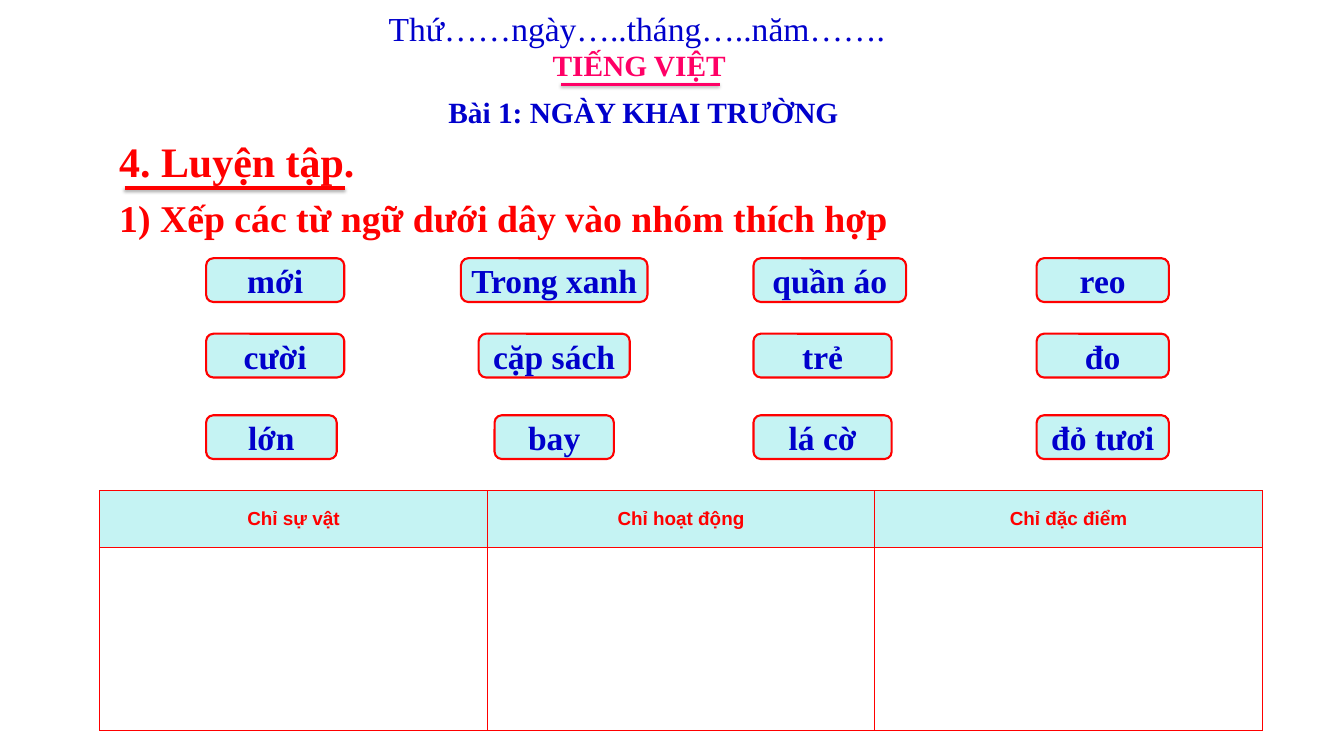
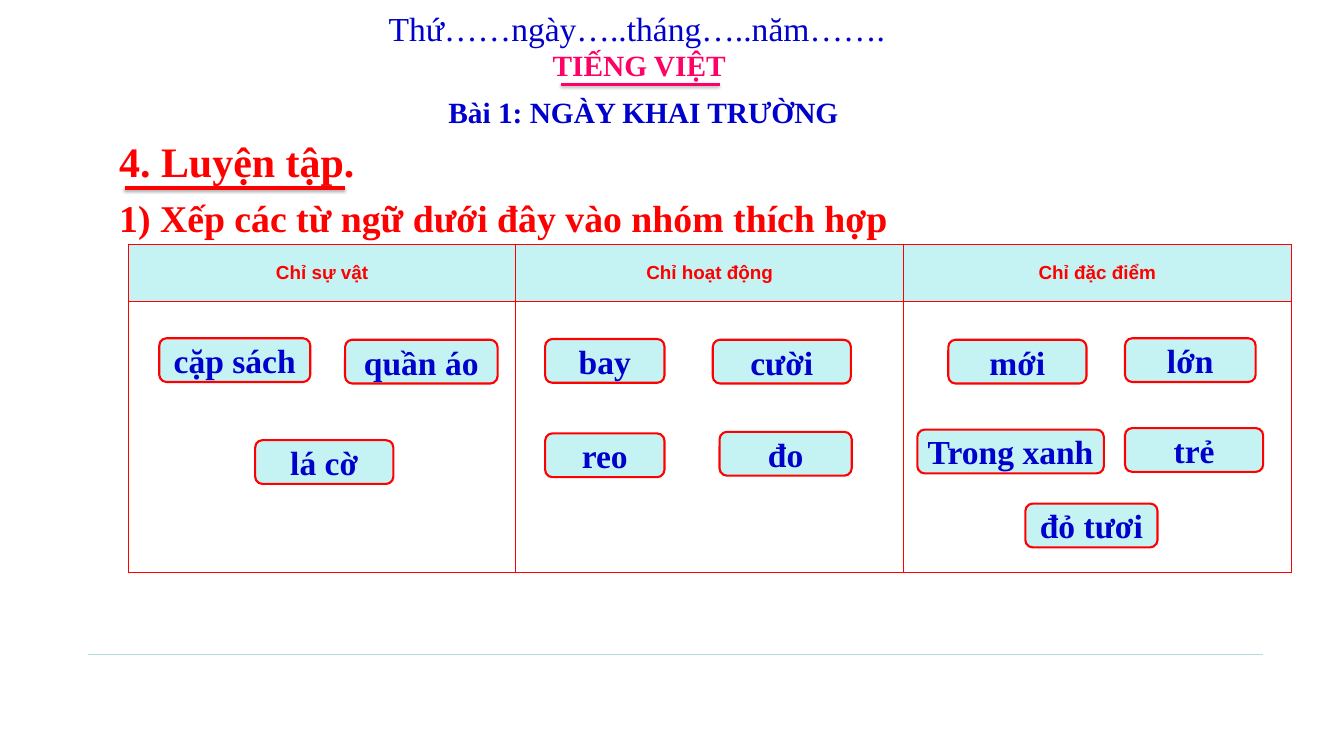
from lxml import etree
from pptx import Presentation
from pptx.dml.color import RGBColor
from pptx.enum.shapes import MSO_CONNECTOR, MSO_SHAPE
from pptx.enum.text import MSO_ANCHOR, MSO_AUTO_SIZE, PP_ALIGN
from pptx.oxml.ns import qn
from pptx.util import Inches, Pt

STRAIGHT = MSO_CONNECTOR.STRAIGHT
ROUND = MSO_SHAPE.ROUNDED_RECTANGLE
MIDDLE = MSO_ANCHOR.MIDDLE
GROW = MSO_AUTO_SIZE.SHAPE_TO_FIT_TEXT
CENTER = PP_ALIGN.CENTER

# Shared look
BLUE, RED, PINK = "0000CC", "FF0000", "FF0066"
AQUA, PALE = "C5F3F3", "B6DCDF"
SERIF, SANS = "Times New Roman", "Arial"
CARD_H = 0.58
WIDTHS = {"mới": 1.83, "cười": 1.83, "lớn": 1.73, "Trong xanh": 2.47,
          "cặp sách": 2, "bay": 1.58, "quần áo": 2.02, "trẻ": 1.83,
          "lá cờ": 1.83, "reo": 1.75, "đo": 1.75, "đỏ tươi": 1.75}
HEADS = ["Chỉ sự vật", "Chỉ hoạt động", "Chỉ đặc điểm"]

# Word cards before sorting: columns by left edge, the second one centred
ROWS = [(3.42, ["mới", "Trong xanh", "quần áo", "reo"]),
        (4.42, ["cười", "cặp sách", "trẻ", "đo"]),
        (5.5, ["lớn", "bay", "lá cờ", "đỏ tươi"])]
LEFTS = [2.73, None, 9.98, 13.73]
MID_X = 7.34

# Word cards after sorting
SORTED = [("cặp sách", 2.11, 4.48), ("quần áo", 4.57, 4.5),
          ("lá cờ", 3.38, 5.83),
          ("bay", 7.22, 4.49), ("cười", 9.44, 4.5),
          ("reo", 7.22, 5.74, 1.58), ("đo", 9.53, 5.72),
          ("mới", 12.56, 4.5), ("lớn", 14.9, 4.48),
          ("Trong xanh", 12.15, 5.69), ("trẻ", 14.9, 5.67),
          ("đỏ tươi", 13.58, 6.67)]


def color(code):
    return RGBColor.from_string(code)


def write(frame, text, size, tint, bold=True, face=SERIF, align=None):
    frame.text = text
    para = frame.paragraphs[0]
    para.alignment = align
    font = para.runs[0].font
    font.size, font.bold, font.name = Pt(size), bold, face
    font.color.rgb = color(tint)


def label(slide, box, text, size, tint, bold=True, wrap=False, align=None):
    frame = slide.shapes.add_textbox(*map(Inches, box)).text_frame
    frame.word_wrap = wrap
    frame.auto_size = GROW
    write(frame, text, size, tint, bold, align=align)
    return frame


def rule(slide, left, right, y, tint, width, shade=None):
    """Level line; shade is (opacity in percent, distance in points)."""
    line = slide.shapes.add_connector(
        STRAIGHT, Inches(left), Inches(y), Inches(right), Inches(y))
    line.line.color.rgb = color(tint)
    line.line.width = Pt(width)
    effect = etree.SubElement(line._element.spPr, qn("a:effectLst"))
    if shade:
        alpha, gap = shade
        cast = etree.SubElement(
            effect, qn("a:outerShdw"), blurRad=str(Pt(3.1)),
            dist=str(Pt(gap)), dir="5400000", rotWithShape="0")
        black = etree.SubElement(cast, qn("a:srgbClr"), val="000000")
        etree.SubElement(black, qn("a:alpha"), val=str(alpha * 1000))


def card(slide, word, left, top, width=None):
    width = width or WIDTHS[word]
    shape = slide.shapes.add_shape(
        ROUND, *map(Inches, (left, top, width, CARD_H)))
    shape.shadow.inherit = False
    shape.fill.solid()
    shape.fill.fore_color.rgb = color(AQUA)
    shape.line.color.rgb = color(RED)
    shape.line.width = Pt(2)
    shape.text_frame.vertical_anchor = MIDDLE
    write(shape.text_frame, word, 32, BLUE, align=CENTER)


def border(cell):
    props = cell._tc.get_or_add_tcPr()
    for side in ("lnL", "lnR", "lnT", "lnB"):
        edge = etree.SubElement(props, qn("a:" + side), w=str(Pt(1)))
        fill = etree.SubElement(edge, qn("a:solidFill"))
        etree.SubElement(fill, qn("a:srgbClr"), val=RED)


def groups(slide, left, top, body):
    """Three-column table with a heading row and an empty body row."""
    head = 0.75
    table = slide.shapes.add_table(
        2, len(HEADS), *map(Inches, (left, top, 15.4, head + body))).table
    table.first_row = table.horz_banding = False
    for row, high in zip(table.rows, (head, body)):
        row.height = Inches(high)
    for cell in table.iter_cells():
        border(cell)
        cell.fill.background()
    for cell, text in zip(table.rows[0].cells, HEADS):
        cell.fill.solid()
        cell.fill.fore_color.rgb = color(AQUA)
        cell.vertical_anchor = MIDDLE
        write(cell.text_frame, text, 18, RED, face=SANS, align=CENTER)


def header(slide, task):
    # Date, subject and lesson
    label(slide, (5.05, 0.05, 6.84, 0.64), "Thứ……ngày…..tháng…..năm…….",
          32, BLUE, bold=False)
    label(slide, (7.22, 0.58, 2.52, 0.57), "TIẾNG VIỆT", 28, PINK)
    rule(slide, 7.43, 9.53, 1.12, PINK, 2, (38, 1.6))
    frame = label(slide, (5.23, 1.17, 6.58, 0.63), "Bài 1: NGÀY KHAI TRƯỜNG",
                  28, BLUE, wrap=True, align=CENTER)
    frame.margin_left = frame.margin_right = Inches(0.16)
    frame.margin_top = frame.margin_bottom = Inches(0.08)
    # Section and task
    label(slide, (1.48, 1.75, 3.75, 0.77), "4. Luyện tập.", 40, RED, wrap=True)
    rule(slide, 1.65, 4.57, 2.49, RED, 3, (35, 1.8))
    label(slide, (1.48, 2.53, 10.48, 0.71), task, 36, RED)


def main():
    deck = Presentation()
    deck.slide_width, deck.slide_height = Inches(17.8), Inches(10)
    blank = deck.slide_layouts[6]

    # Slide 1: words to sort
    slide = deck.slides.add_slide(blank)
    header(slide, "1) Xếp các từ ngữ dưới dây vào nhóm thích hợp")
    for top, words in ROWS:
        for left, word in zip(LEFTS, words):
            card(slide, word, left or MID_X - WIDTHS[word] / 2, top)
    groups(slide, 1.32, 6.5, 2.42)

    # Slide 2: words in their groups
    slide = deck.slides.add_slide(blank)
    groups(slide, 1.7, 3.24, 3.59)
    header(slide, "1) Xếp các từ ngữ dưới đây vào nhóm thích hợp")
    for item in SORTED:
        card(slide, *item)
    rule(slide, 1.17, 16.73, 8.67, PALE, 0.75)

    deck.save("out.pptx")


if __name__ == "__main__":
    main()
